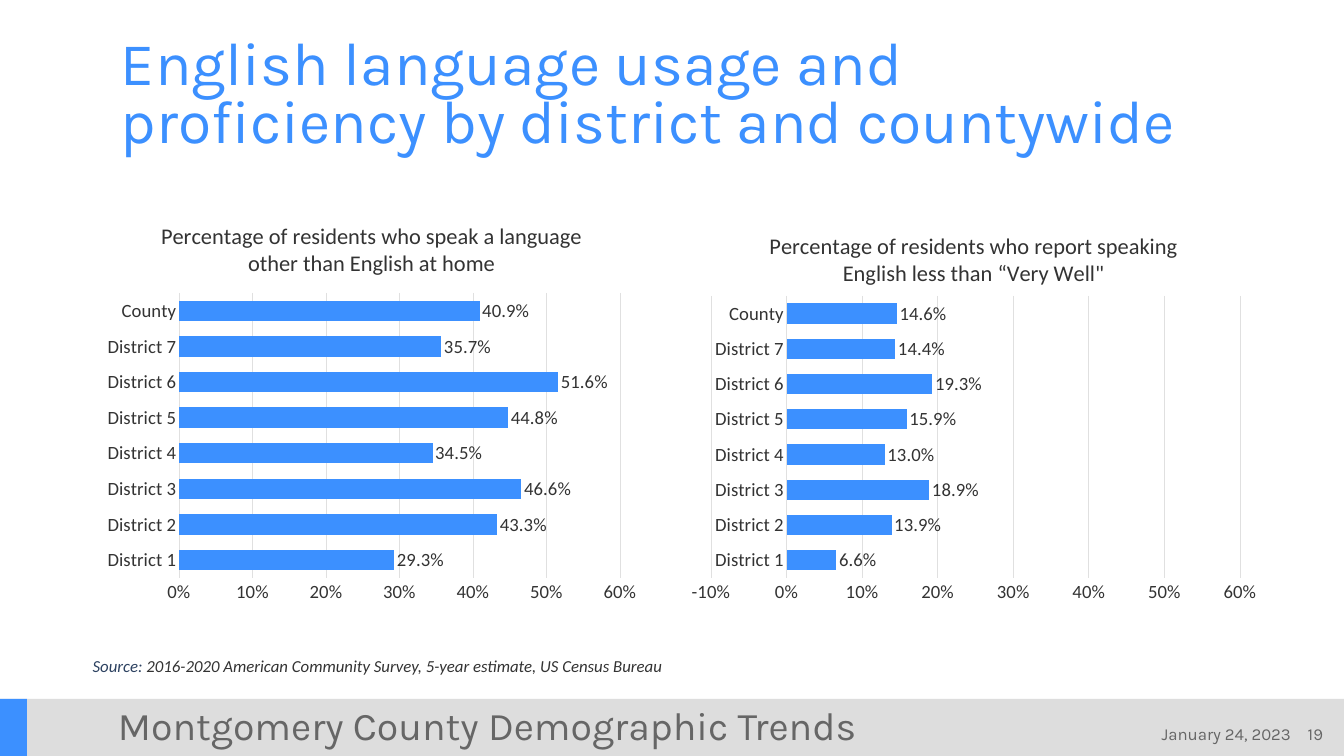
"""Build the slide on English language usage with two district bar charts."""
import pptx
import pptx.util
import pptx.chart.data
import pptx.dml.color
import pptx.enum.chart
import pptx.enum.shapes
import pptx.enum.text
import pptx.oxml

PX = 13607
BLUE, GRAY, DARK, GRID = "3C90FF", "666666", "333333", "E0E0E0"
ALIGN = pptx.enum.text.PP_ALIGN
ANCHOR = pptx.enum.text.MSO_ANCHOR


def rgb(value):
    return pptx.dml.color.RGBColor.from_string(value)


def write(frame, text, size, color, font="Karla", italic=False, align=ALIGN.LEFT,
          anchor=None, margins=None, spacing=None):
    paragraph = frame.paragraphs[0]
    paragraph.alignment = align
    if spacing:
        paragraph.line_spacing = spacing
    if anchor is not None:
        frame.word_wrap = True
        frame.vertical_anchor = anchor
    if margins is not None:
        frame.margin_left, frame.margin_top, frame.margin_right, frame.margin_bottom = (
            side * PX for side in margins)
    run = paragraph.add_run()
    run.text = text
    run.font.size = pptx.util.Pt(size)
    run.font.name = font
    run.font.bold = False
    run.font.italic = italic
    run.font.color.rgb = rgb(color)


deck = pptx.Presentation()
deck.slide_width, deck.slide_height = pptx.util.Inches(20), pptx.util.Inches(11.25)
slide = deck.slides.add_slide(deck.slide_layouts[5])

for width, fill in ((1344, "DDDDDD"), (27, BLUE)):
    band = slide.shapes.add_shape(
        pptx.enum.shapes.MSO_SHAPE.RECTANGLE, 0, 699 * PX, width * PX, 57 * PX)
    band.shadow.inherit = False
    band.fill.solid()
    band.fill.fore_color.rgb = rgb(fill)
    band.line.fill.background()

footer_parts = (
    ("Montgomery County Demographic Trends", 118, 705, 1102, 40, 42, ALIGN.LEFT, ANCHOR.MIDDLE),
    ("19", 1258, 727, 65, 17, 18, ALIGN.RIGHT, ANCHOR.BOTTOM),
    ("January 24, 2023", 1102, 727, 189, 17, 18, ALIGN.RIGHT, ANCHOR.BOTTOM),
)
for text, left, top, width, height, size, align, anchor in footer_parts:
    footer = slide.shapes.add_textbox(left * PX, top * PX, width * PX, height * PX)
    write(footer.text_frame, text, size, GRAY, align=align, anchor=anchor, margins=(0, 0, 0, 0))

headline = slide.shapes.title
headline.left, headline.top, headline.width, headline.height = (
    121 * PX, 34 * PX, 1102 * PX, 121 * PX)
headline.text_frame.auto_size = pptx.enum.text.MSO_AUTO_SIZE.NONE
write(headline.text_frame, "English language usage and proficiency by district and countywide",
      65, BLUE, anchor=ANCHOR.BOTTOM, margins=(0, 3, 7, 0), spacing=0.8)

areas = [f"District {number}" for number in range(1, 8)] + ["County"]
surveys = (
    ("Percentage of residents who speak a language other than English at home",
     (0.293, 0.433, 0.466, 0.345, 0.448, 0.516, 0.357, 0.409), 0,
     (96, 205, 551, 407), (179, 293, 441, 285)),
    ("Percentage of residents who report speaking English less than “Very Well\"",
     (0.066, 0.139, 0.189, 0.13, 0.159, 0.193, 0.144, 0.146), -0.1,
     (679, 215, 589, 396), (711, 296, 529, 282)),
)
for question, shares, minimum, (left, top, width, height), plot_box in surveys:
    data = pptx.chart.data.CategoryChartData(number_format="0.0%")
    data.categories = areas
    data.add_series("Series 1", shares)
    chart = slide.shapes.add_chart(
        pptx.enum.chart.XL_CHART_TYPE.BAR_CLUSTERED,
        left * PX, top * PX, width * PX, height * PX, data).chart
    chart.has_legend = False
    chart.font.size = pptx.util.Pt(20)
    chart.font.name = "Calibri"
    chart.font.color.rgb = rgb(DARK)
    write(chart.chart_title.text_frame, question, 24, DARK, font="Calibri", align=ALIGN.CENTER)
    chart.chart_title.include_in_layout = False

    district_axis, share_axis = chart.category_axis, chart.value_axis
    for axis in (district_axis, share_axis):
        axis.major_tick_mark = axis.minor_tick_mark = pptx.enum.chart.XL_TICK_MARK.NONE
    share_axis.minimum_scale, share_axis.maximum_scale = minimum, 0.6
    share_axis.major_unit = 0.1
    share_axis.tick_labels.number_format = "0%"
    share_axis.tick_labels.number_format_is_linked = False
    share_axis.format.line.fill.background()
    for line in (district_axis.format.line, share_axis.major_gridlines.format.line):
        line.color.rgb = rgb(GRID)
        line.width = pptx.util.Pt(0.75)

    plot = chart.plots[0]
    plot.gap_width = 75
    plot.vary_by_categories = False
    bars = plot.series[0]
    bars.format.fill.solid()
    bars.format.fill.fore_color.rgb = rgb(BLUE)
    plot.has_data_labels = True
    labels = plot.data_labels
    labels.show_value = True
    labels.number_format = "0.0%"
    labels.number_format_is_linked = False
    labels.position = pptx.enum.chart.XL_LABEL_POSITION.OUTSIDE_END

    plot_area = chart.element.chart.plotArea
    for old_layout in plot_area.xpath("c:layout"):
        plot_area.remove(old_layout)
    plot_left, plot_top, plot_width, plot_height = plot_box
    fractions = (("x", (plot_left - left) / width), ("y", (plot_top - top) / height),
                 ("w", plot_width / width), ("h", plot_height / height))
    plot_area.insert(0, pptx.oxml.parse_xml(
        '<c:layout xmlns:c="http://schemas.openxmlformats.org/drawingml/2006/chart">'
        '<c:manualLayout><c:layoutTarget val="inner"/>'
        '<c:xMode val="edge"/><c:yMode val="edge"/>'
        + "".join(f'<c:{side} val="{part:.4f}"/>' for side, part in fractions)
        + '</c:manualLayout></c:layout>'))

source = slide.shapes.add_textbox(86 * PX, 652 * PX, 622 * PX, 48 * PX).text_frame
for text, color in (("Source: ", "2D4261"),
                    ("2016-2020 American Community Survey, 5-year estimate, US Census Bureau", DARK)):
    write(source, text, 18, color, font="Calibri", italic=True, anchor=ANCHOR.TOP)

deck.save("out.pptx")
